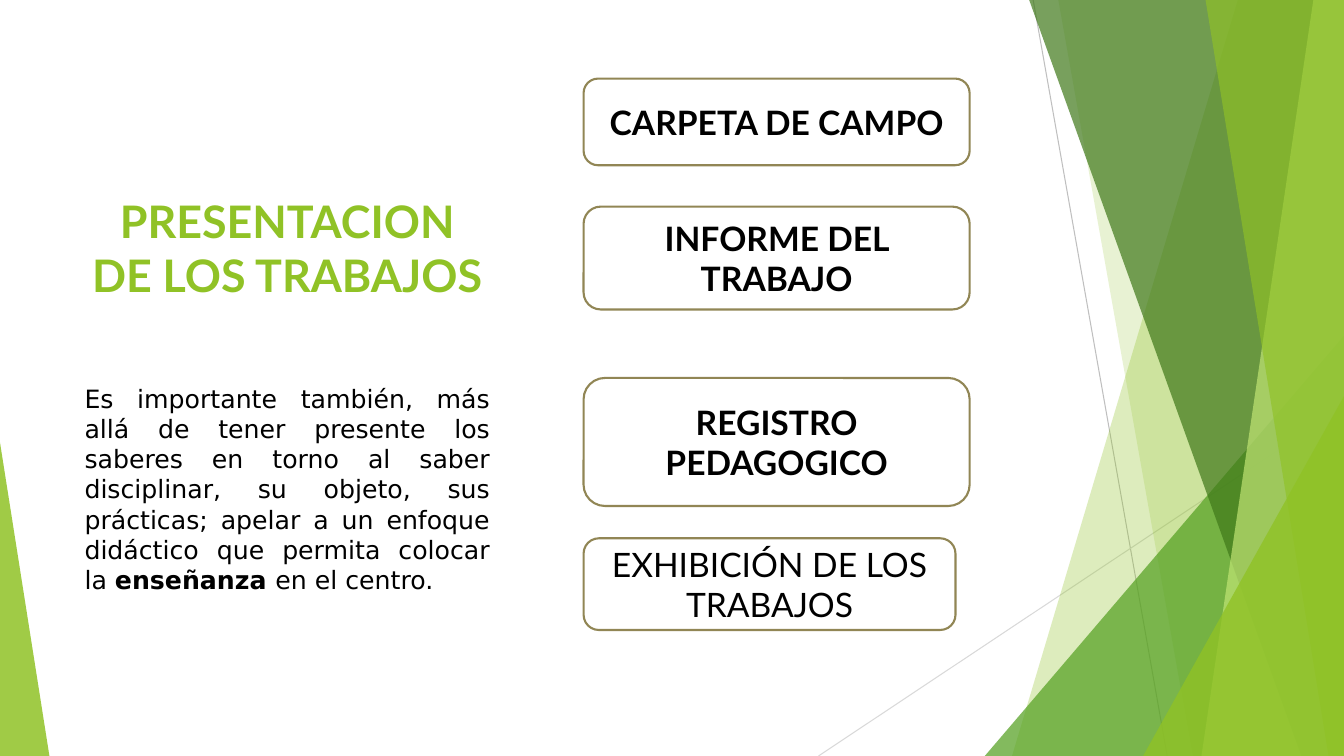
from lxml.etree import SubElement as Sub
from pptx import Presentation
from pptx.dml.color import RGBColor as RGB
from pptx.enum.shapes import MSO_CONNECTOR as Link, MSO_SHAPE as Shape
from pptx.enum.text import MSO_ANCHOR as Anchor, MSO_AUTO_SIZE as Fit, PP_ALIGN as Align
from pptx.oxml.ns import qn
from pptx.util import Inches, Pt

# Slide grid: 40 columns by 30 rows
WIDE, HIGH = Inches(13.333), Inches(7.5)
COLS, ROWS = 40, 30

HUES = {
    "lime": "90C226", "leaf": "54A021", "pine": "3F7819", "pale": "C0E474",
    "gray": "BFBFBF", "mist": "D9D9D9", "edge": "918655",
    "white": "FFFFFF", "black": "000000",
}

# Box tops, heights and widths in grid units
CARDS = [
    ("CARPETA DE CAMPO", 3.12, 3.44, 11.49, True),
    ("INFORME DEL TRABAJO", 8.2, 4.08, 11.49, True),
    ("REGISTRO PEDAGOGICO", 15, 5.08, 11.49, True),
    ("EXHIBICIÓN DE LOS TRABAJOS", 21.36, 3.64, 11.07, False),
]


def hue(name):
    return RGB.from_string(HUES[name])


def at(col, row):
    return round(WIDE * col / COLS), round(HIGH * row / ROWS)


def area(col, row, cols, rows):
    return *at(col, row), *at(cols, rows)


def place(shape, box):
    shape.left, shape.top, shape.width, shape.height = area(*box)


def style(para, font, size, color, align, bold=None):
    para.alignment = align
    para.font.name, para.font.size = font, Pt(size)
    para.font.color.rgb, para.font.bold = hue(color), bold


def paint(shape, color, alpha):
    shape.shadow.inherit = False
    shape.fill.solid()
    shape.fill.fore_color.rgb = hue(color)
    tint = shape._element.spPr.find(".//" + qn("a:srgbClr"))
    Sub(tint, qn("a:alpha"), val=str(alpha * 1000))
    shape.line.fill.background()


def ray(slide, start, end, color):
    line = slide.shapes.add_connector(Link.STRAIGHT, *at(*start), *at(*end))
    line.line.color.rgb, line.line.width = hue(color), Pt(0.75)
    Sub(line._element.spPr, qn("a:effectLst"))


def facet(slide, box, top, base, color, alpha):
    """Fill from a slanted left edge to the right side of the box."""
    left, head, cols, rows = box
    right, foot = left + cols, head + rows
    form = slide.shapes.build_freeform(*at(left + top, head), scale=1.0)
    form.add_line_segments([at(right, head), at(right, foot), at(left + base, foot)])
    paint(form.convert_to_shape(), color, alpha)


def wedge(slide, box, peak, color, alpha):
    shape = slide.shapes.add_shape(Shape.ISOSCELES_TRIANGLE, *area(*box))
    shape.adjustments[0] = peak
    paint(shape, color, alpha)


def decor(slide, box):
    left, head, cols, rows = box

    def corner(col, row, color, alpha):
        part = (left + col, head + row, cols - col, rows - row)
        wedge(slide, part, 1, color, alpha)

    # Thin rays
    ray(slide, (left + 30.75, head), (left + 34.74, head + rows), "gray")
    ray(slide, (left + cols, head + 16.12), (left + 24.36, head + rows), "mist")
    # Overlapping facets, back to front
    facet(slide, box, 36.84, 30.12, "lime", 30)
    facet(slide, box, 31.5, 35.5, "lime", 20)
    corner(29.31, 13.32, "leaf", 72)
    facet(slide, box, 30.63, 38.73, "pine", 70)
    facet(slide, box, 39.09, 35.76, "pale", 70)
    facet(slide, box, 35.88, 39.54, "lime", 65)
    corner(34.02, 15.72, "lime", 80)
    # Left corner
    wedge(slide, (left, head + 17.56, 1.47, rows - 17.56), 0, "lime", 85)


def heading(slide, box):
    title = slide.shapes.title
    place(title, box)
    frame = title.text_frame
    frame.text = "PRESENTACION DE LOS TRABAJOS"
    frame.auto_size, frame.vertical_anchor = Fit.NONE, Anchor.BOTTOM
    style(frame.paragraphs[0], "Lato", 32, "lime", Align.CENTER, True)


def body(slide, box):
    frame = slide.shapes.add_textbox(*area(*box)).text_frame
    frame.word_wrap = True
    para = frame.paragraphs[0]
    style(para, "DejaVu Sans", 18, "black", Align.JUSTIFY)
    para.space_before = Pt(10)
    para.add_run().text = (
        "Es importante también, más allá de tener presente los saberes en torno "
        "al saber disciplinar, su objeto, sus prácticas; apelar a un enfoque "
        "didáctico que permita colocar la ")
    key = para.add_run()
    key.text, key.font.bold = "enseñanza ", True
    para.add_run().text = "en el centro."


def card(slide, box, text, bold):
    shape = slide.shapes.add_shape(Shape.ROUNDED_RECTANGLE, *area(*box))
    shape.shadow.inherit = False
    shape.fill.solid()
    shape.fill.fore_color.rgb = hue("white")
    shape.line.color.rgb, shape.line.width = hue("edge"), Pt(1.5)
    frame = shape.text_frame
    frame.text, frame.word_wrap = text, True
    frame.vertical_anchor = Anchor.MIDDLE
    style(frame.paragraphs[0], "Lato", 24, "black", Align.CENTER, bold)


def main():
    deck = Presentation()
    deck.slide_width, deck.slide_height = WIDE, HIGH
    slide = deck.slides.add_slide(deck.slide_layouts[5])
    decor(slide, (0, 0, COLS, ROWS))
    heading(slide, (2.22, 6.56, 12.66, 5.6))
    body(slide, (2.22, 15, 12.66, 8.44))
    for text, row, rows, cols, bold in CARDS:
        card(slide, (17.37, row, cols, rows), text, bold)
    deck.save("out.pptx")


if __name__ == "__main__":
    main()
